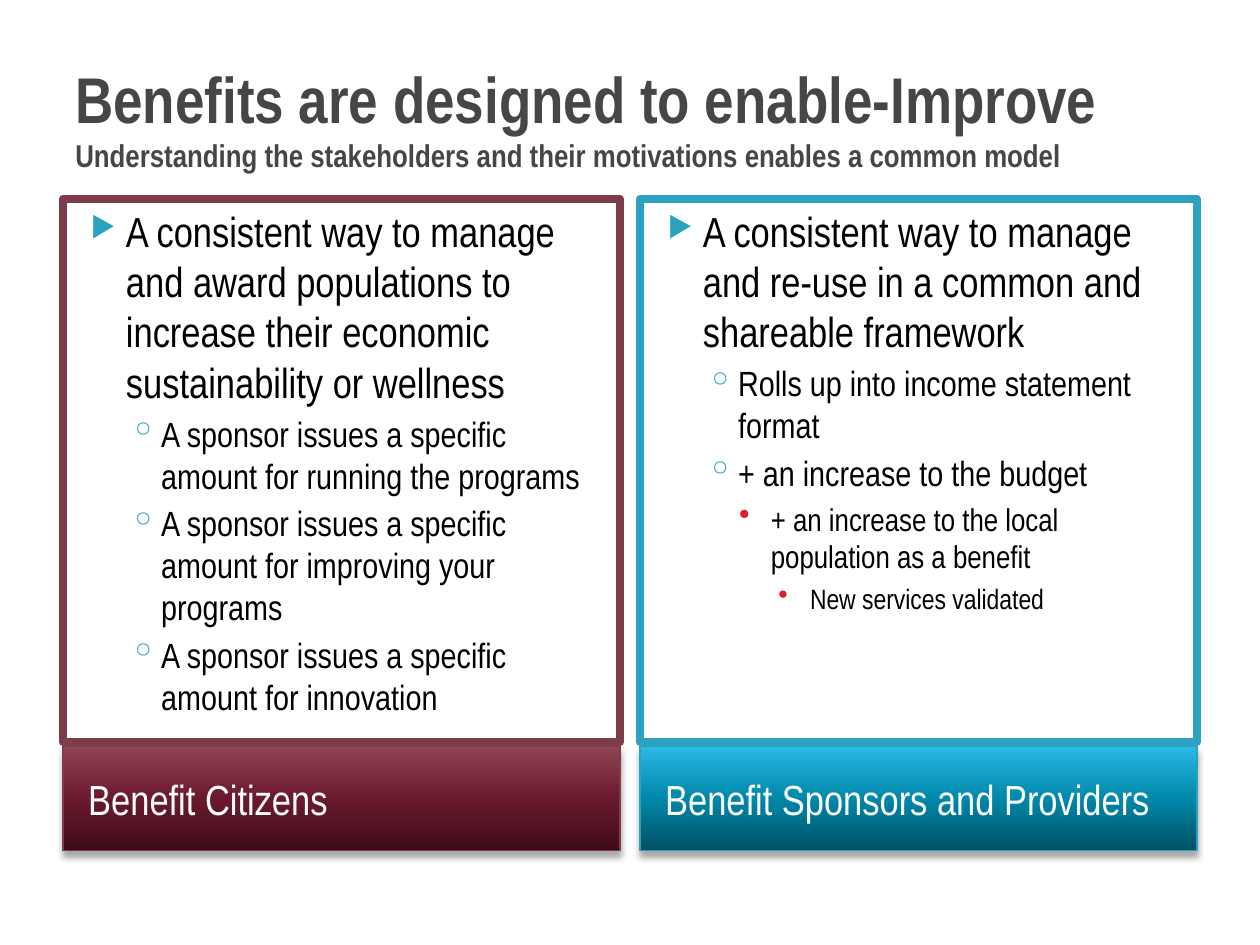
import copy

import pptx
import pptx.dml.color
import pptx.enum.shapes
import pptx.enum.text
import pptx.oxml
import pptx.oxml.ns
import pptx.util
from lxml import etree

Cm = pptx.util.Cm
Pt = pptx.util.Pt
qn = pptx.oxml.ns.qn

FONT = "Arial Narrow"
COLORS = {
    "title": "464646",
    "text": "000000",
    "white": "FFFFFF",
    "teal": "2DA2BF",
    "wine": "7D3C4A",
    "red": "DA1F28",
    "shadow": "000000",
}
BANDS = {
    "wine": ("924353", "6A1A2C", "400B18"),
    "teal": ("2BB9E6", "0088AA", "005064"),
}
LEVELS = [
    {"size": 24, "left": 1.02, "hang": 0.71, "before": 4, "bullet": "▶", "color": "teal", "scale": 68},
    {"size": 20, "left": 1.73, "hang": 0.64, "before": 3.2, "bullet": "◦", "color": "teal", "scale": 100},
    {"size": 18, "left": 2.39, "hang": 0.64, "before": 3.5, "bullet": "•", "color": "red", "scale": 100},
    {"size": 16, "left": 3.18, "hang": 0.64, "before": 3.5, "bullet": "•", "color": "red", "scale": 100},
]
COLUMN_WIDTH = 11.23
COLUMNS = [
    {
        "left": 1.27,
        "color": "wine",
        "label": "Benefit Citizens",
        "points": [
            (0, "A consistent way to manage and award populations to increase their economic sustainability or wellness"),
            (1, "A sponsor issues a specific amount for running the programs"),
            (1, "A sponsor issues a specific amount for improving your programs"),
            (1, "A sponsor issues a specific amount for innovation"),
        ],
    },
    {
        "left": 12.9,
        "color": "teal",
        "label": "Benefit Sponsors and Providers",
        "points": [
            (0, "A consistent way to manage and re-use in a common and shareable framework"),
            (1, "Rolls up into income statement format"),
            (1, "+ an increase to the budget"),
            (2, "+ an increase to the local population as a benefit"),
            (3, "New services validated"),
        ],
    },
]


def rgb(value):
    return pptx.dml.color.RGBColor.from_string(value)


def style_font(font, size, color, bold=False):
    font.name = FONT
    font.size = Pt(size)
    font.bold = bold
    font.color.rgb = rgb(COLORS[color])


def add_title(slide, heading, subheading):
    title = slide.shapes.add_textbox(Cm(1.27), Cm(0.76), Cm(22.86), Cm(3.18))
    frame = title.text_frame
    frame.word_wrap = True
    frame.vertical_anchor = pptx.enum.text.MSO_ANCHOR.MIDDLE
    frame.text = f"{heading}\v{subheading}"
    for run, size in zip(frame.paragraphs[0].runs, (36.9, 18)):
        style_font(run.font, size, "title", bold=True)


def add_box(slide, left, top, height, line_color, line_width):
    box = slide.shapes.add_shape(
        pptx.enum.shapes.MSO_SHAPE.RECTANGLE, Cm(left), Cm(top), Cm(COLUMN_WIDTH), Cm(height)
    )
    box.shadow.inherit = False
    box.line.color.rgb = rgb(COLORS[line_color])
    box.line.width = Pt(line_width)
    box.text_frame.word_wrap = True
    return box


def fill_gradient(box, colors):
    box.fill.gradient()
    box.fill.gradient_angle = 270
    stop_list = box._element.spPr.find(".//" + qn("a:gsLst"))
    stop_list.append(copy.deepcopy(stop_list[-1]))
    for stop, position, color in zip(box.fill.gradient_stops, (0, 0.5, 1), colors):
        stop.position = position
        stop.color.rgb = rgb(color)


def add_shadow(box):
    effects = box._element.spPr.find(qn("a:effectLst"))
    shadow = etree.SubElement(
        effects, qn("a:outerShdw"), blurRad=str(Pt(4)), dist=str(Pt(3)),
        dir="5400000", algn="ctr", rotWithShape="0",
    )
    color = etree.SubElement(shadow, qn("a:srgbClr"), val=COLORS["shadow"])
    etree.SubElement(color, qn("a:alpha"), val="35000")


def add_label(slide, column):
    label = add_box(slide, column["left"], 15.04, 2.11, column["color"], 0.75)
    fill_gradient(label, BANDS[column["color"]])
    add_shadow(label)
    frame = label.text_frame
    frame.margin_left = Cm(0.51)
    frame.vertical_anchor = pptx.enum.text.MSO_ANCHOR.MIDDLE
    frame.text = column["label"]
    paragraph = frame.paragraphs[0]
    paragraph.alignment = pptx.enum.text.PP_ALIGN.LEFT
    style_font(paragraph.runs[0].font, 24, "white")


def add_bullet(paragraph, level):
    properties = paragraph._p.get_or_add_pPr()
    properties.set("marL", str(Cm(level["left"])))
    properties.set("indent", str(-Cm(level["hang"])))
    color = etree.SubElement(properties, qn("a:buClr"))
    etree.SubElement(color, qn("a:srgbClr"), val=COLORS[level["color"]])
    etree.SubElement(properties, qn("a:buSzPct"), val=str(level["scale"] * 1000))
    etree.SubElement(properties, qn("a:buChar"), char=level["bullet"])


def add_panel(slide, column):
    panel = add_box(slide, column["left"], 4.01, 10.95, column["color"], 4.5)
    panel.fill.solid()
    panel.fill.fore_color.rgb = rgb(COLORS["white"])
    frame = panel.text_frame
    frame.vertical_anchor = pptx.enum.text.MSO_ANCHOR.TOP
    for index, (depth, text) in enumerate(column["points"]):
        level = LEVELS[depth]
        point = frame.add_paragraph() if index else frame.paragraphs[0]
        point.text = text
        point.level = depth
        point.alignment = pptx.enum.text.PP_ALIGN.LEFT
        add_bullet(point, level)
        if index:
            point.space_before = Pt(level["before"])
        style_font(point.runs[0].font, level["size"], "text")


def main():
    deck = pptx.Presentation()
    deck.slide_width = Cm(25.4)
    deck.slide_height = Cm(19.05)
    slide = deck.slides.add_slide(deck.slide_layouts[6])
    add_title(
        slide,
        "Benefits are designed to enable-Improve ",
        "Understanding the stakeholders and their motivations enables a common model",
    )
    for column in COLUMNS:
        add_label(slide, column)
    for column in COLUMNS:
        add_panel(slide, column)
    deck.save("out.pptx")


if __name__ == "__main__":
    main()
